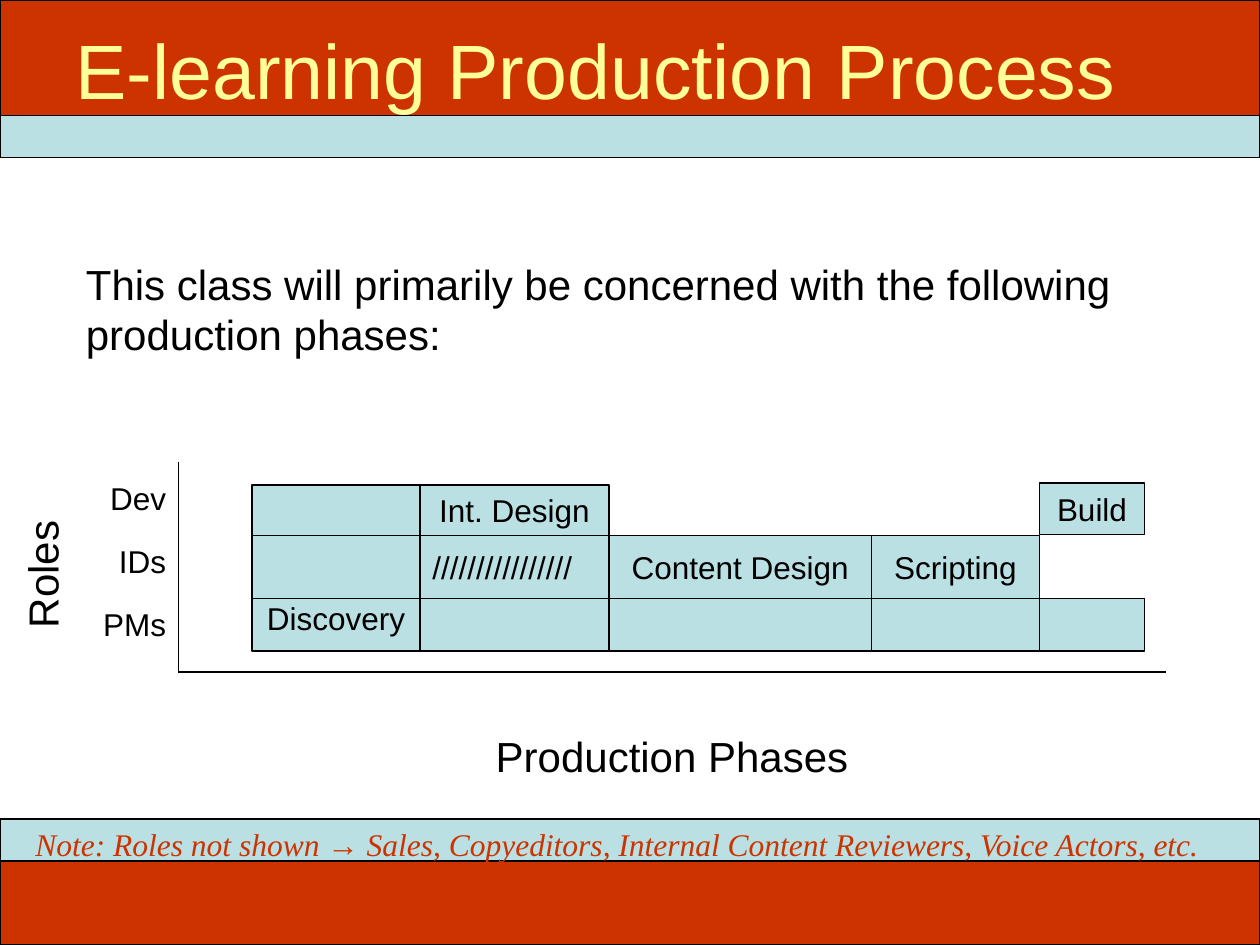
import dataclasses

import lxml.etree
import pptx
import pptx.dml.color
import pptx.enum.shapes
import pptx.enum.text
import pptx.oxml.ns
import pptx.util

ALIGN = pptx.enum.text.PP_ALIGN
ANCHOR = pptx.enum.text.MSO_ANCHOR
COLORS = {
    "ink": "000000",
    "brick": "CC3300",
    "ice": "BBE0E3",
    "cream": "FFFF99",
}
COLUMNS, ROWS = 120, 90  # the slide as a grid of twelfths of an inch

# Column edges of the phases and row edges of the roles
PHASE_EDGES = [24, 40, 58, 83, 99, 109]
DEV_TOP, IDS_TOP, PMS_TOP, PMS_END = 46.2, 51, 57, 62
AXIS_X, AXIS_Y = 17, 64


@dataclasses.dataclass(frozen=True)
class Area:
    left: float
    top: float
    right: float
    bottom: float


@dataclasses.dataclass(frozen=True)
class Block:
    area: Area
    label: str = ""
    fill: str = "ice"
    outlined: bool = True
    align: ALIGN = ALIGN.CENTER
    anchor: ANCHOR = ANCHOR.MIDDLE
    bottom_inset: float = 0.05


@dataclasses.dataclass(frozen=True)
class Label:
    area: Area
    text: str
    size: int = 18
    align: ALIGN = ALIGN.LEFT
    font: str = "Arial"
    color: str = "ink"
    italic: bool = False
    rotation: int = 0


def phase_area(phase: int, top: float, bottom: float) -> Area:
    return Area(PHASE_EDGES[phase], top, PHASE_EDGES[phase + 1], bottom)


BANDS = [
    Block(Area(0, 11, COLUMNS, 15)),
    Block(Area(0, 0, COLUMNS, 11), fill="brick"),
    Block(Area(0, 78, COLUMNS, 82)),
    Block(Area(0, 82, COLUMNS, ROWS), fill="brick"),
]
PHASES = [
    Block(phase_area(1, IDS_TOP, PMS_TOP), "////////////////",
          outlined=False, align=ALIGN.LEFT),
    Block(phase_area(2, IDS_TOP, PMS_TOP), "Content Design"),
    Block(phase_area(0, DEV_TOP, PMS_END), "Discovery",
          anchor=ANCHOR.BOTTOM, bottom_inset=0.11),
    Block(phase_area(1, DEV_TOP, IDS_TOP), "Int. Design"),
    Block(phase_area(3, IDS_TOP, PMS_TOP), "Scripting"),
    Block(phase_area(4, 46, 50.9), "Build"),
    *(Block(phase_area(phase, PMS_TOP, PMS_END)) for phase in range(1, 5)),
]
ROLES = [
    Label(Area(7, top, AXIS_X, top + 4.8), role, align=ALIGN.RIGHT)
    for role, top in (("Dev", 45), ("IDs", 51), ("PMs", 57))
]
LABELS = [
    Label(Area(-3.5, 50.5, 11.5, 56.5), "Roles", 24, rotation=270),
    *ROLES,
    Label(Area(2.2, 78, COLUMNS, 82.8),
          "Note: Roles not shown → Sales, Copyeditors, "
          "Internal Content Reviewers, Voice Actors, etc.",
          font="Times New Roman", color="brick", italic=True),
    Label(Area(28, 69, 100, 75), "Production Phases", 24, ALIGN.CENTER),
    Label(Area(7, 24, 113, 34.8),
          "This class will primarily be concerned with "
          "the following production phases:", 24),
]
LINES = [
    Area(AXIS_X, 44, AXIS_X, AXIS_Y),
    Area(AXIS_X, AXIS_Y, 111, AXIS_Y),
    *(Area(PHASE_EDGES[0], y, PHASE_EDGES[1], y) for y in (PMS_TOP, IDS_TOP)),
]


def rgb(name: str) -> pptx.dml.color.RGBColor:
    return pptx.dml.color.RGBColor.from_string(COLORS[name])


def grid(units: float) -> int:
    return pptx.util.Inches(units / 12)


def frame(area: Area) -> tuple[int, int, int, int]:
    """Left, top, width and height of an area."""
    return (grid(area.left), grid(area.top),
            grid(area.right - area.left), grid(area.bottom - area.top))


def write(text_frame, text: str, *, size: int = 18, font: str = "Arial",
          color: str = "ink", italic: bool = False, align: ALIGN = ALIGN.LEFT,
          anchor: ANCHOR = ANCHOR.TOP) -> None:
    text_frame.word_wrap = True
    text_frame.vertical_anchor = anchor
    paragraph = text_frame.paragraphs[0]
    paragraph.alignment = align
    run = paragraph.add_run()
    run.text = text
    run.font.size = pptx.util.Pt(size)
    run.font.name = font
    run.font.italic = italic
    run.font.color.rgb = rgb(color)


def outline(line) -> None:
    line.color.rgb = rgb("ink")
    line.width = pptx.util.Pt(0.75)


def draw_block(slide, block: Block) -> None:
    shape = slide.shapes.add_shape(
        pptx.enum.shapes.MSO_SHAPE.RECTANGLE, *frame(block.area))
    shape.shadow.inherit = False
    shape.fill.solid()
    shape.fill.fore_color.rgb = rgb(block.fill)
    if block.outlined:
        outline(shape.line)
    else:
        shape.line.fill.background()
    if block.label:
        shape.text_frame.margin_bottom = pptx.util.Inches(block.bottom_inset)
        write(shape.text_frame, block.label, align=block.align,
              anchor=block.anchor)


def draw_label(slide, label: Label) -> None:
    box = slide.shapes.add_textbox(*frame(label.area))
    box.rotation = label.rotation
    write(box.text_frame, label.text, size=label.size, font=label.font,
          color=label.color, italic=label.italic, align=label.align)


def draw_line(slide, ends: Area) -> None:
    line = slide.shapes.add_connector(
        pptx.enum.shapes.MSO_CONNECTOR.STRAIGHT,
        grid(ends.left), grid(ends.top), grid(ends.right), grid(ends.bottom))
    outline(line.line)
    lxml.etree.SubElement(line.element.spPr, pptx.oxml.ns.qn("a:effectLst"))


def place_title(slide, text: str) -> None:
    """Format the title and lift it above the bands."""
    title = slide.shapes.title
    title.left, title.top, title.width, title.height = frame(
        Area(6, 0, 114, 13))
    write(title.text_frame, text, size=44, color="cream", anchor=ANCHOR.MIDDLE)
    title.element.getparent().append(title.element)


def main() -> None:
    deck = pptx.Presentation()
    deck.slide_width, deck.slide_height = grid(COLUMNS), grid(ROWS)
    slide = deck.slides.add_slide(deck.slide_layouts.get_by_name("Title Only"))
    for block in BANDS:
        draw_block(slide, block)
    place_title(slide, "E-learning Production Process")
    for block in PHASES:
        draw_block(slide, block)
    for label in LABELS:
        draw_label(slide, label)
    for line in LINES:
        draw_line(slide, line)
    deck.save("out.pptx")


if __name__ == "__main__":
    main()
